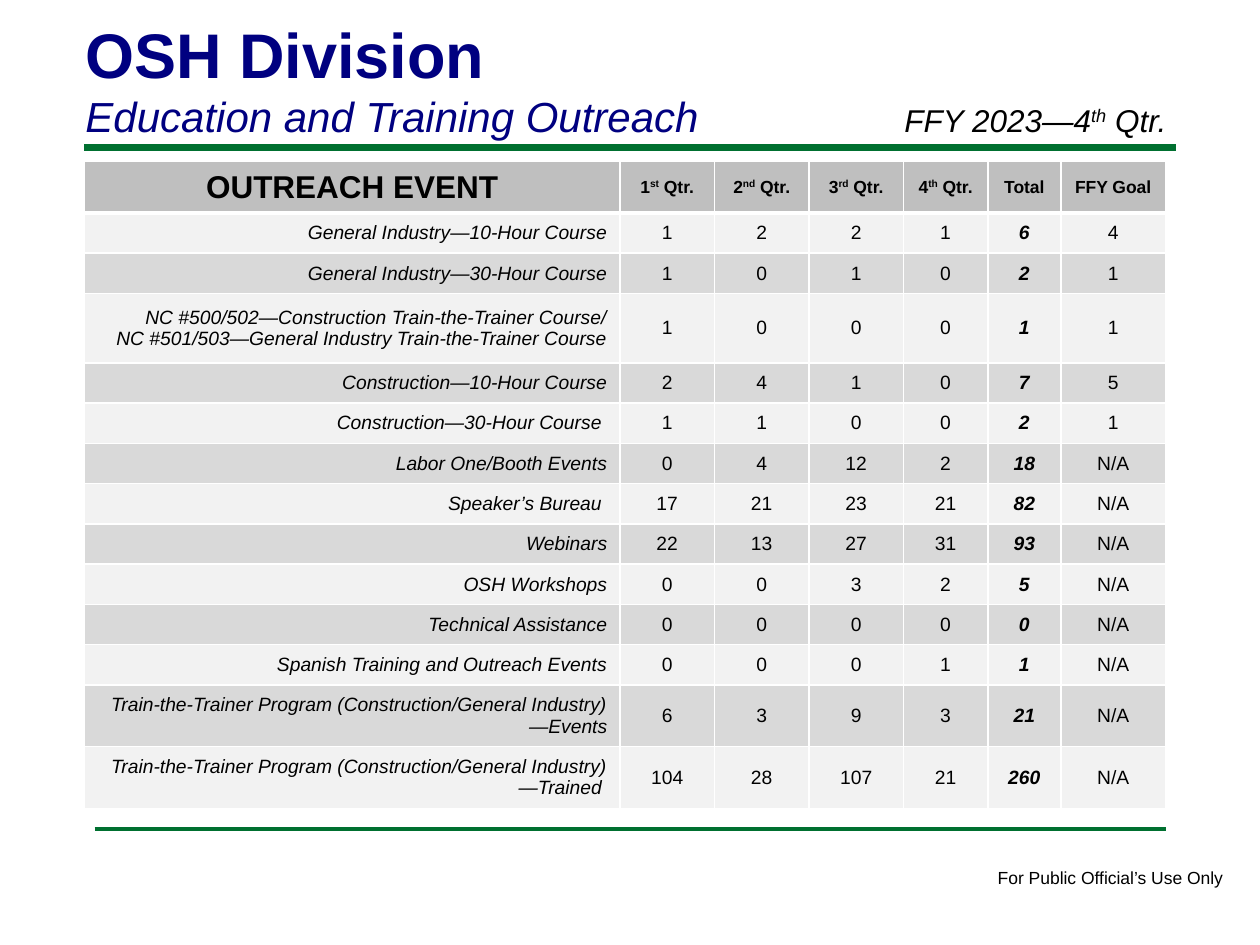
from dataclasses import dataclass

import pptx
import pptx.dml.color
import pptx.enum.shapes
import pptx.enum.text
import pptx.oxml
import pptx.oxml.ns
import pptx.util
from pptx.util import Inches

ALIGN = pptx.enum.text.PP_ALIGN
ANCHOR = pptx.enum.text.MSO_ANCHOR


@dataclass(frozen=True)
class Theme:
    font: str = "Arial"
    ink: str = "000000"
    navy: str = "000080"
    green: str = "007030"
    white: str = "FFFFFF"
    head: str = "BFBFBF"
    bands: tuple = ("F2F2F2", "D9D9D9")
    title: int = 36
    sub: int = 24
    large: int = 18
    body: int = 11
    small: int = 10


@dataclass(frozen=True)
class Style:
    size: int
    color: str = "000000"
    bold: bool = False
    italic: bool = False


@dataclass(frozen=True)
class Event:
    name: str
    quarters: tuple
    total: int
    goal: str = "N/A"
    height: float = 0.32


@dataclass(frozen=True)
class Rule:
    left: float
    right: float
    top: float
    weight: int


@dataclass(frozen=True)
class Label:
    box: tuple
    lines: tuple
    wrap: bool = True
    anchor: ANCHOR = ANCHOR.TOP


THEME = Theme()

RULES = (Rule(0.67, 9.33, 1.17, 4), Rule(0.75, 9.25, 6.58, 2))

# Text between carets is superscript
LABELS = (
    Label((7.82, 6.83, 2.01, 0.27),
          (("For Public Official’s Use Only", Style(THEME.small)),), wrap=False),
    Label((0.58, 0.06, 8.25, 1.11),
          (("OSH Division", Style(THEME.title, THEME.navy, bold=True)),
           ("Education and Training Outreach",
            Style(THEME.sub, THEME.navy, italic=True))), anchor=ANCHOR.BOTTOM),
    Label((7.08, 0.75, 2.5, 0.4),
          (("FFY 2023—4^th^ Qtr.", Style(THEME.large, italic=True)),)),
)

HEADS = ("OUTREACH EVENT", "1^st^ Qtr.", "2^nd^ Qtr.", "3^rd^ Qtr.",
         "4^th^ Qtr.", "Total", "FFY Goal")
WIDTHS = (4.25, 0.75, 0.75, 0.75, 0.67, 0.58, 0.83)
TRAIN = "Train-the-Trainer Program (Construction/General Industry)"
EVENTS = (
    Event("General Industry—10-Hour Course", (1, 2, 2, 1), 6, "4"),
    Event("General Industry—30-Hour Course", (1, 0, 1, 0), 2, "1"),
    Event("NC #500/502—Construction Train-the-Trainer Course/\n"
          "NC #501/503—General Industry Train-the-Trainer Course",
          (1, 0, 0, 0), 1, "1", 0.55),
    Event("Construction—10-Hour Course", (2, 4, 1, 0), 7, "5"),
    Event("Construction—30-Hour Course ", (1, 1, 0, 0), 2, "1"),
    Event("Labor One/Booth Events", (0, 4, 12, 2), 18),
    Event("Speaker’s Bureau ", (17, 21, 23, 21), 82),
    Event("Webinars", (22, 13, 27, 31), 93),
    Event("OSH Workshops", (0, 0, 3, 2), 5),
    Event("Technical Assistance", (0, 0, 0, 0), 0),
    Event("Spanish Training and Outreach Events", (0, 0, 0, 1), 1),
    Event(TRAIN + "—Events", (6, 3, 9, 3), 21, height=0.49),
    Event(TRAIN + "—Trained ", (104, 28, 107, 21), 260, height=0.49),
)


def rgb(code: str):
    return pptx.dml.color.RGBColor.from_string(code)


def write(frame, lines, align=ALIGN.LEFT) -> None:
    for n, (text, style) in enumerate(lines):
        para = frame.paragraphs[0] if n == 0 else frame.add_paragraph()
        para.alignment = align
        for k, part in enumerate(text.split("^")):
            run = para.add_run()
            run.text = part
            font = run.font
            font.name, font.size = THEME.font, pptx.util.Pt(style.size)
            font.bold, font.italic = style.bold, style.italic
            font.color.rgb = rgb(style.color)
            if k % 2:
                run._r.get_or_add_rPr().set("baseline", "30000")


def draw_rule(slide, rule: Rule) -> None:
    line = slide.shapes.add_connector(
        pptx.enum.shapes.MSO_CONNECTOR.STRAIGHT, Inches(rule.left),
        Inches(rule.top), Inches(rule.right), Inches(rule.top))
    line.line.color.rgb = rgb(THEME.green)
    line.line.width = pptx.util.Pt(rule.weight)
    line._element.spPr.append(pptx.oxml.parse_xml(
        f"<a:effectLst {pptx.oxml.ns.nsdecls('a')}/>"))


def draw_label(slide, label: Label) -> None:
    box = slide.shapes.add_textbox(*map(Inches, label.box))
    frame = box.text_frame
    frame.word_wrap = label.wrap
    frame.auto_size = pptx.enum.text.MSO_AUTO_SIZE.SHAPE_TO_FIT_TEXT
    frame.vertical_anchor = label.anchor
    write(frame, label.lines)


def edge(cell, top: int, bottom: int) -> None:
    props = cell._tc.get_or_add_tcPr()
    for side, weight in (("L", 1), ("R", 1), ("T", top), ("B", bottom)):
        props.append(pptx.oxml.parse_xml(
            f"<a:ln{side} {pptx.oxml.ns.nsdecls('a')} w='{pptx.util.Pt(weight)}'>"
            f"<a:solidFill><a:srgbClr val='{THEME.white}'/></a:solidFill>"
            f"</a:ln{side}>"))


def fill_cell(cell, text: str, style: Style, align, shade: str,
              top: int = 1, bottom: int = 1) -> None:
    edge(cell, top, bottom)
    cell.fill.solid()
    cell.fill.fore_color.rgb = rgb(shade)
    cell.vertical_anchor = ANCHOR.MIDDLE
    write(cell.text_frame, [(line, style) for line in text.split("\n")], align)


def draw_table(slide) -> None:
    heights = (0.41, *(event.height for event in EVENTS))
    table = slide.shapes.add_table(
        len(heights), len(WIDTHS), Inches(0.67), Inches(1.28),
        Inches(sum(WIDTHS)), Inches(sum(heights))).table
    for col, width in zip(table.columns, WIDTHS):
        col.width = Inches(width)
    for row, height in zip(table.rows, heights):
        row.height = Inches(height)

    # Header row
    for c, text in enumerate(HEADS):
        size = THEME.small if c else THEME.large
        fill_cell(table.cell(0, c), text, Style(size, bold=True),
                  ALIGN.CENTER, THEME.head, bottom=3)

    # Event rows
    plain = Style(THEME.body)
    name = Style(THEME.body, italic=True)
    total = Style(THEME.body, bold=True, italic=True)
    styles = (name, *[plain] * 4, total, plain)
    for r, event in enumerate(EVENTS, 1):
        values = (event.name, *event.quarters, event.total, event.goal)
        shade = THEME.bands[(r - 1) % 2]
        for c, (value, style) in enumerate(zip(values, styles)):
            fill_cell(table.cell(r, c), str(value), style,
                      ALIGN.CENTER if c else ALIGN.RIGHT, shade,
                      top=3 if r == 1 else 1)


def main() -> None:
    deck = pptx.Presentation()
    deck.slide_width, deck.slide_height = Inches(10), Inches(7.5)
    slide = deck.slides.add_slide(deck.slide_layouts[6])
    for rule in RULES:
        draw_rule(slide, rule)
    for label in LABELS:
        draw_label(slide, label)
    draw_table(slide)
    deck.save("out.pptx")


if __name__ == "__main__":
    main()
